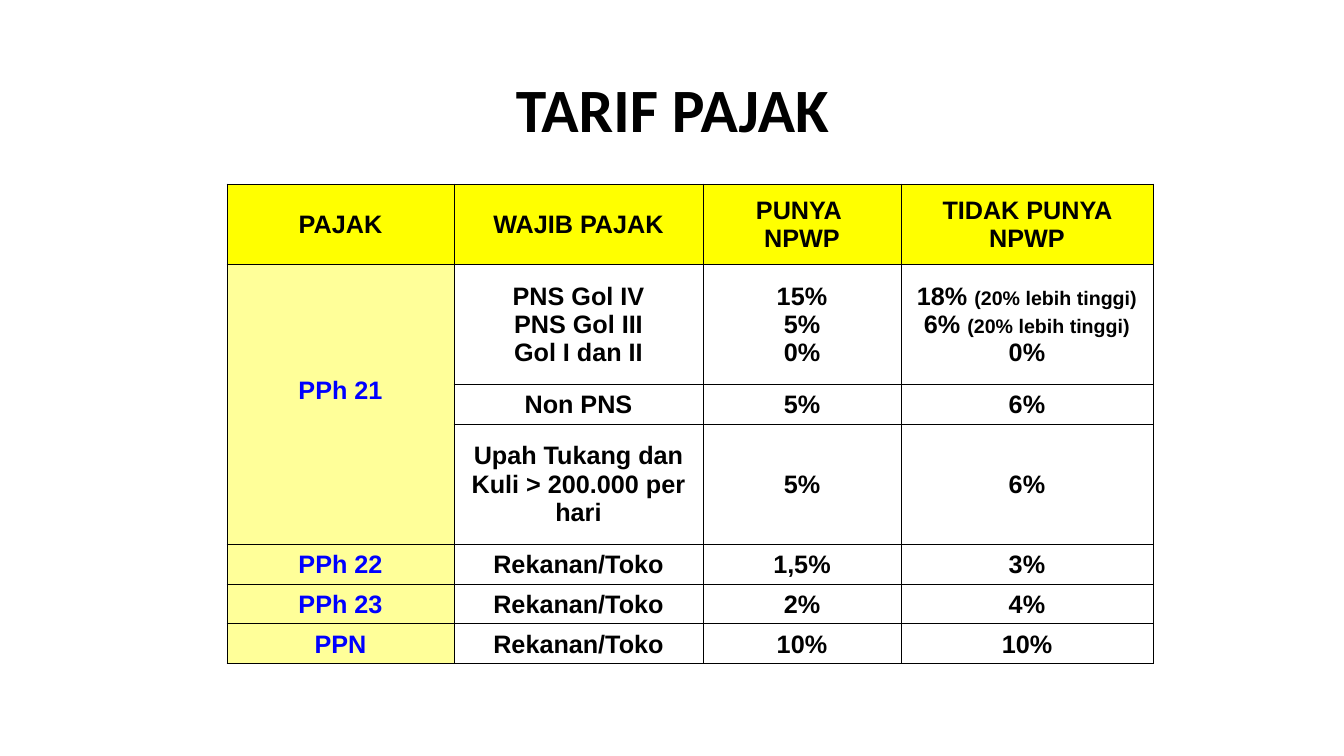
from lxml.etree import SubElement
from pptx import Presentation
from pptx.dml.color import RGBColor
from pptx.enum.text import MSO_ANCHOR, PP_ALIGN
from pptx.oxml.ns import qn
from pptx.util import Pt

SCALE = 914400 / 100.8
BLACK, WHITE, BLUE = "000000", "FFFFFF", "0000FF"
YELLOW, PALE_YELLOW = "FFFF00", "FFFF99"
COLUMN_WIDTHS = [227, 249, 198, 252]
ROW_UNIT = 40
ROW_UNITS = [2, 3, 1, 3, 1, 1, 1]
RATES = [
    ["PAJAK", "WAJIB PAJAK", "PUNYA \nNPWP", "TIDAK PUNYA NPWP"],
    ["PPh 21", "PNS Gol IV\nPNS Gol III\nGol I dan II", "15%\n5%\n0%",
     "18% (20% lebih tinggi)\n6% (20% lebih tinggi)\n0%"],
    ["", "Non PNS", "5%", "6%"],
    ["", "Upah Tukang dan Kuli > 200.000 per hari", "5%", "6%"],
    ["PPh 22", "Rekanan/Toko", "1,5%", "3%"],
    ["PPh 23", "Rekanan/Toko", "2%", "4%"],
    ["PPN", "Rekanan/Toko", "10%", "10%"],
]


def px(length):
    return round(length * SCALE)


def style_paragraph(paragraph, font_name, size, color):
    paragraph.alignment = PP_ALIGN.CENTER
    paragraph.font.name = font_name
    paragraph.font.size = Pt(size)
    paragraph.font.bold = True
    paragraph.font.color.rgb = RGBColor.from_string(color)


presentation = Presentation()
presentation.slide_width = px(1344)
presentation.slide_height = px(756)
slide = presentation.slides.add_slide(presentation.slide_layouts[6])

title = slide.shapes.add_textbox(px(93), px(40), px(1159), px(146))
title.text_frame.word_wrap = True
title.text_frame.vertical_anchor = MSO_ANCHOR.MIDDLE
title_paragraph = title.text_frame.paragraphs[0]
title_paragraph.text = "TARIF PAJAK"
title_paragraph.line_spacing = 0.9
style_paragraph(title_paragraph, "Calibri", 44, BLACK)

table = slide.shapes.add_table(
    len(RATES), len(COLUMN_WIDTHS), px(227), px(184),
    px(sum(COLUMN_WIDTHS)), px(ROW_UNIT * sum(ROW_UNITS))).table
for column, width in zip(table.columns, COLUMN_WIDTHS):
    column.width = px(width)
for row, units in zip(table.rows, ROW_UNITS):
    row.height = px(ROW_UNIT * units)
table.cell(1, 0).merge(table.cell(3, 0))

for row_index, row_texts in enumerate(RATES):
    for column_index, text in enumerate(row_texts):
        cell = table.cell(row_index, column_index)
        cell.vertical_anchor = MSO_ANCHOR.MIDDLE
        cell.margin_left = cell.margin_right = cell.margin_top = px(1)
        cell.margin_bottom = 0

        cell_properties = cell._tc.get_or_add_tcPr()
        for side in ["a:lnL", "a:lnR", "a:lnT", "a:lnB"]:
            border = SubElement(cell_properties, qn(side), w=str(Pt(0.5)))
            border_fill = SubElement(border, qn("a:solidFill"))
            SubElement(border_fill, qn("a:srgbClr"), val=BLACK)

        if row_index == 0:
            fill_color, text_color = YELLOW, BLACK
        elif column_index == 0:
            fill_color, text_color = PALE_YELLOW, BLUE
        else:
            fill_color, text_color = WHITE, BLACK
        cell.fill.solid()
        cell.fill.fore_color.rgb = RGBColor.from_string(fill_color)

        lines = text.split("\n")
        for line_index, line in enumerate(lines):
            if line_index:
                paragraph = cell.text_frame.add_paragraph()
            else:
                paragraph = cell.text_frame.paragraphs[0]
            style_paragraph(paragraph, "Arial", 18, text_color)
            rate, bracket, note = line.partition("(")
            if rate:
                paragraph.add_run().text = rate
            if note:
                note_run = paragraph.add_run()
                note_run.text = bracket + note
                note_run.font.size = Pt(14)

table.cell(1, 0).margin_bottom = px(28)

presentation.save("out.pptx")
